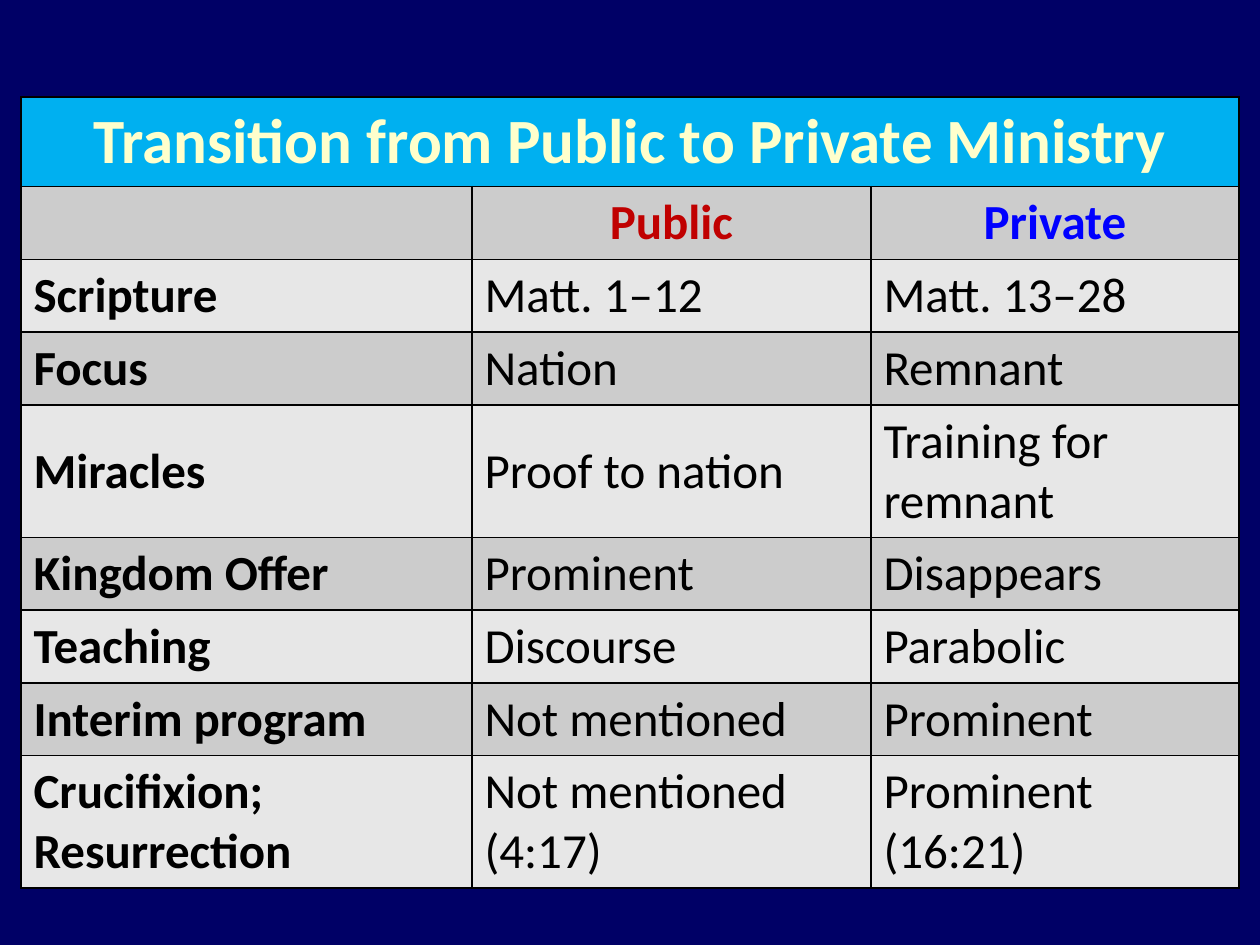
"""Build a slide with a table comparing the public and private ministry."""
from lxml import etree
from pptx import Presentation
from pptx.dml.color import RGBColor
from pptx.enum.text import MSO_ANCHOR, PP_ALIGN
from pptx.oxml.ns import qn
from pptx.util import Pt

LEFT, CENTER = PP_ALIGN.LEFT, PP_ALIGN.CENTER
MIDDLE = MSO_ANCHOR.MIDDLE
PX = 914400 / 126
COLORS = {
    "navy": "000066", "sky": "00B0F0", "cream": "FFFFCC", "black": "000000",
    "red": "C00000", "blue": "0000FF", "dark": "CCCCCC", "light": "E7E7E7",
}
COL_WIDTHS = [451, 399, 368]
ROW_HEIGHTS = [89, 73, 72, 73, 132, 72, 73, 72, 132]
ROWS = [
    ("Transition from Public to Private Ministry", "", ""),
    ("", "Public", "Private"),
    ("Scripture", "Matt. 1–12", "Matt. 13–28"),
    ("Focus", "Nation", "Remnant"),
    ("Miracles", "Proof to nation", "Training for remnant"),
    ("Kingdom Offer", "Prominent", "Disappears"),
    ("Teaching", "Discourse", "Parabolic"),
    ("Interim program", "Not mentioned", "Prominent"),
    ("Crucifixion; Resurrection", "Not mentioned (4:17)", "Prominent (16:21)"),
]


def px(n):
    return round(n * PX)


def write(cell, text, size=28, color="black", bold=False, align=LEFT):
    p = cell.text_frame.paragraphs[0]
    p.alignment = align
    r = p.add_run()
    r.text = text
    r.font.name = "Calibri"
    r.font.size = Pt(size)
    r.font.bold = bold
    r.font.color.rgb = RGBColor.from_string(COLORS[color])


prs = Presentation()
prs.slide_width, prs.slide_height = px(1260), px(945)
s = prs.slides.add_slide(prs.slide_layouts[6])
s.background.fill.solid()
s.background.fill.fore_color.rgb = RGBColor.from_string(COLORS["navy"])

frame = s.shapes.add_table(len(ROWS), len(COL_WIDTHS), px(21), px(97),
                           px(sum(COL_WIDTHS)), px(sum(ROW_HEIGHTS)))
table = frame.table
table.first_row = table.horz_banding = False
for col, width in zip(table.columns, COL_WIDTHS):
    col.width = px(width)
for row, height in zip(table.rows, ROW_HEIGHTS):
    row.height = px(height)
table.cell(0, 0).merge(table.cell(0, 2))

for i, texts in enumerate(ROWS):
    band = "sky" if i == 0 else "dark" if i % 2 else "light"
    for j, text in enumerate(texts):
        cell = table.cell(i, j)
        cell.vertical_anchor = MIDDLE if i > 1 else None
        tcPr = cell._tc.get_or_add_tcPr()
        for side in ("lnL", "lnR", "lnT", "lnB"):
            ln = etree.SubElement(tcPr, qn(f"a:{side}"), w=str(Pt(1)))
            fill = etree.SubElement(ln, qn("a:solidFill"))
            etree.SubElement(fill, qn("a:srgbClr"), val=COLORS["black"])
        cell.fill.solid()
        cell.fill.fore_color.rgb = RGBColor.from_string(COLORS[band])
        if not text:
            continue
        if i == 0:
            write(cell, text, size=36, color="cream", bold=True, align=CENTER)
        elif i == 1:
            write(cell, text, color="red" if j == 1 else "blue", bold=True, align=CENTER)
        else:
            write(cell, text, bold=j == 0)

prs.save("out.pptx")
